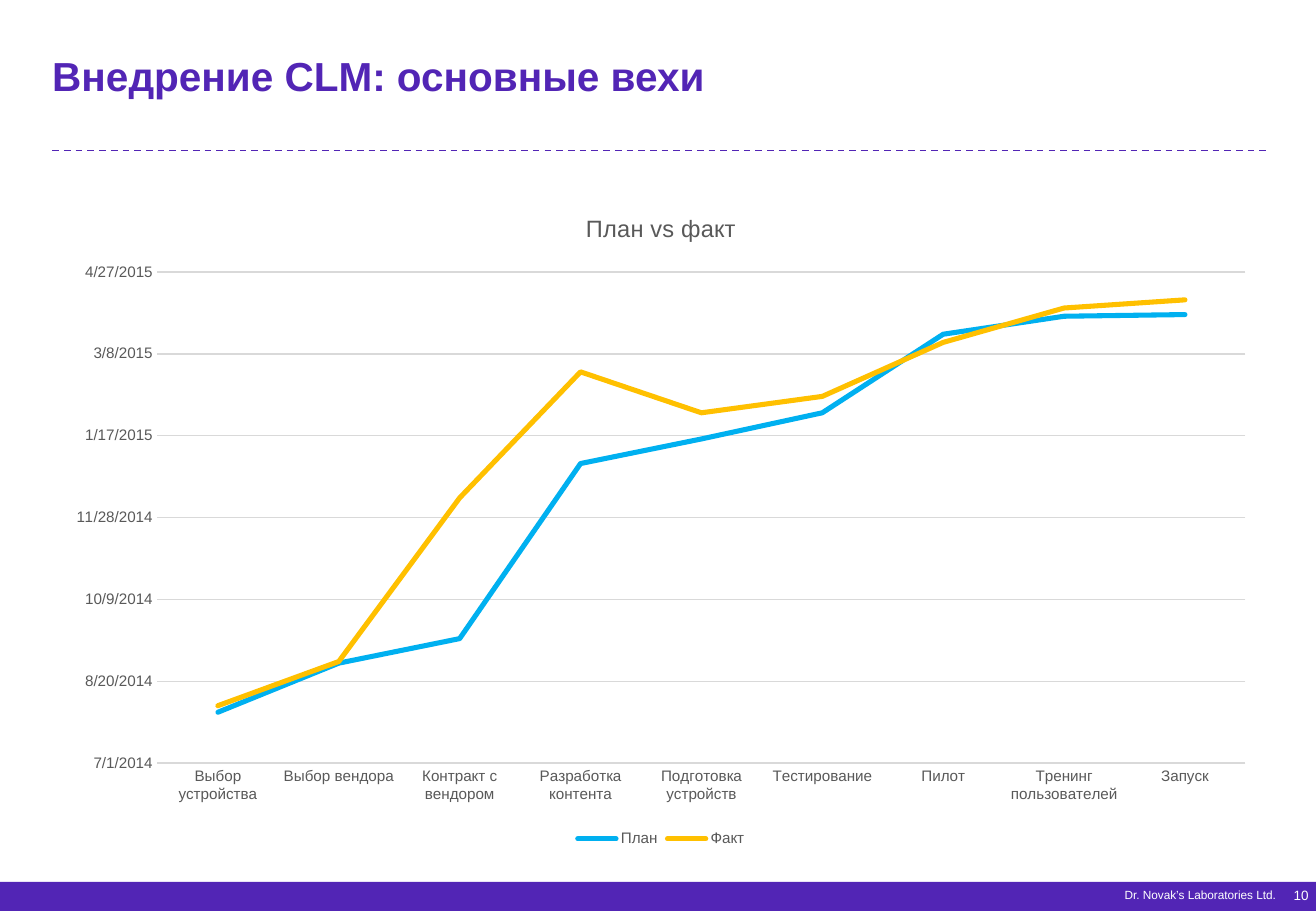
from pptx import Presentation
from pptx.chart.data import CategoryChartData as ChartData
from pptx.dml.color import RGBColor as Rgb
from pptx.enum.chart import XL_CHART_TYPE as Kind, XL_LEGEND_POSITION as Spot, XL_TICK_MARK as Tick
from pptx.enum.dml import MSO_LINE as Dash
from pptx.enum.shapes import MSO_CONNECTOR as Conn, MSO_SHAPE as Shape
from pptx.enum.text import MSO_ANCHOR as Anchor, PP_ALIGN as Align
from pptx.oxml.ns import qn
from pptx.util import Pt
from lxml.etree import SubElement

PX = 9144  # 100 px to the inch
FONT = "Arial"
HEX = {"brand": "5225B5", "white": "FFFFFF", "gray": "595959",
       "grid": "D9D9D9", "plan": "00B0F0", "fact": "FFC000"}
COLOR = {name: Rgb.from_string(code) for name, code in HEX.items()}


def box(*nums):
    return [n * PX for n in nums]


def style(font, size, color, bold=False):
    font.name, font.size, font.bold = FONT, Pt(size), bold
    font.color.rgb = COLOR[color]


deck = Presentation()
deck.slide_width, deck.slide_height = box(1083, 750)
slide = deck.slides.add_slide(deck.slide_layouts[5])
shapes = slide.shapes

# Footer band
band = shapes.add_shape(Shape.RECTANGLE, *box(0, 726, 1083, 24))
band.shadow.inherit = False
band.fill.solid()
band.fill.fore_color.rgb = COLOR["brand"]
band.line.fill.background()

# Page number and company
for text, size, place in [("10", 8, (1041, 726, 36, 21)),
                          ("Dr. Novak’s Laboratories Ltd.", 7, (705, 726, 345, 21))]:
    note = shapes.add_textbox(*box(*place))
    frame = note.text_frame
    frame.word_wrap = True
    frame.vertical_anchor = Anchor.MIDDLE
    frame.margin_left = frame.margin_right = frame.margin_top = frame.margin_bottom = 0
    frame.text = text
    para = frame.paragraphs[0]
    para.alignment = Align.RIGHT
    style(para.runs[0].font, size, "white")

# Dashed rule under the title
rule = shapes.add_connector(Conn.STRAIGHT, *box(43, 124, 1045, 124))
rule.line.color.rgb = COLOR["brand"]
rule.line.width = Pt(1)
rule.line.dash_style = Dash.DASH
SubElement(rule._element.spPr, qn("a:effectLst"))

# Title
title = shapes.title
title.left, title.top, title.width, title.height = box(43, 40, 1002, 75)
frame = title.text_frame
frame.text = "Внедрение CLM: основные вехи"
frame.vertical_anchor = Anchor.TOP
frame.margin_left = frame.margin_right = frame.margin_bottom = 0
frame.margin_top = 2 * PX
para = frame.paragraphs[0]
para.alignment = Align.LEFT
style(para.runs[0].font, 24, "brand", True)

# Milestone dates as day numbers
data = ChartData(number_format="m/d/yyyy")
data.categories = ["Выбор устройства", "Выбор вендора", "Контракт с вендором",
                   "Разработка контента", "Подготовка устройств", "Тестирование",
                   "Пилот", "Тренинг пользователей", "Запуск"]
data.add_series("План", [41852, 41882, 41897, 42004, 42019, 42035, 42083, 42094, 42095])
data.add_series("Факт", [41856, 41883, 41983, 42060, 42035, 42045, 42078, 42099, 42104])
chart = shapes.add_chart(Kind.LINE, *box(43, 156, 1002, 546), data).chart
style(chart.font, 10, "gray")

# Chart title and legend
chart.has_title = True
frame = chart.chart_title.text_frame
frame.text = "План vs факт"
style(frame.paragraphs[0].runs[0].font, 14, "gray")
chart.chart_title.include_in_layout = False
chart.has_legend = True
chart.legend.position = Spot.BOTTOM
chart.legend.include_in_layout = False
style(chart.legend.font, 9, "gray")

# Axes
dates = chart.value_axis
for axis in (chart.category_axis, dates):
    axis.major_tick_mark = axis.minor_tick_mark = Tick.NONE
    axis.format.line.fill.background()
    style(axis.tick_labels.font, 9, "gray")
dates.minimum_scale, dates.maximum_scale, dates.major_unit = 41821, 42121, 50
dates.tick_labels.number_format = "m/d/yyyy"
dates.tick_labels.number_format_is_linked = False
grid = dates.major_gridlines.format.line
grid.color.rgb = COLOR["grid"]
grid.width = Pt(0.75)

# Series lines with round ends
chart.plots[0].vary_by_categories = False
for series, name in zip(chart.plots[0].series, ("plan", "fact")):
    series.smooth = False
    line = series.format.line
    line.color.rgb = COLOR[name]
    line.width = Pt(3)
    series._element.find(".//" + qn("a:ln")).set("cap", "rnd")

deck.save("out.pptx")
